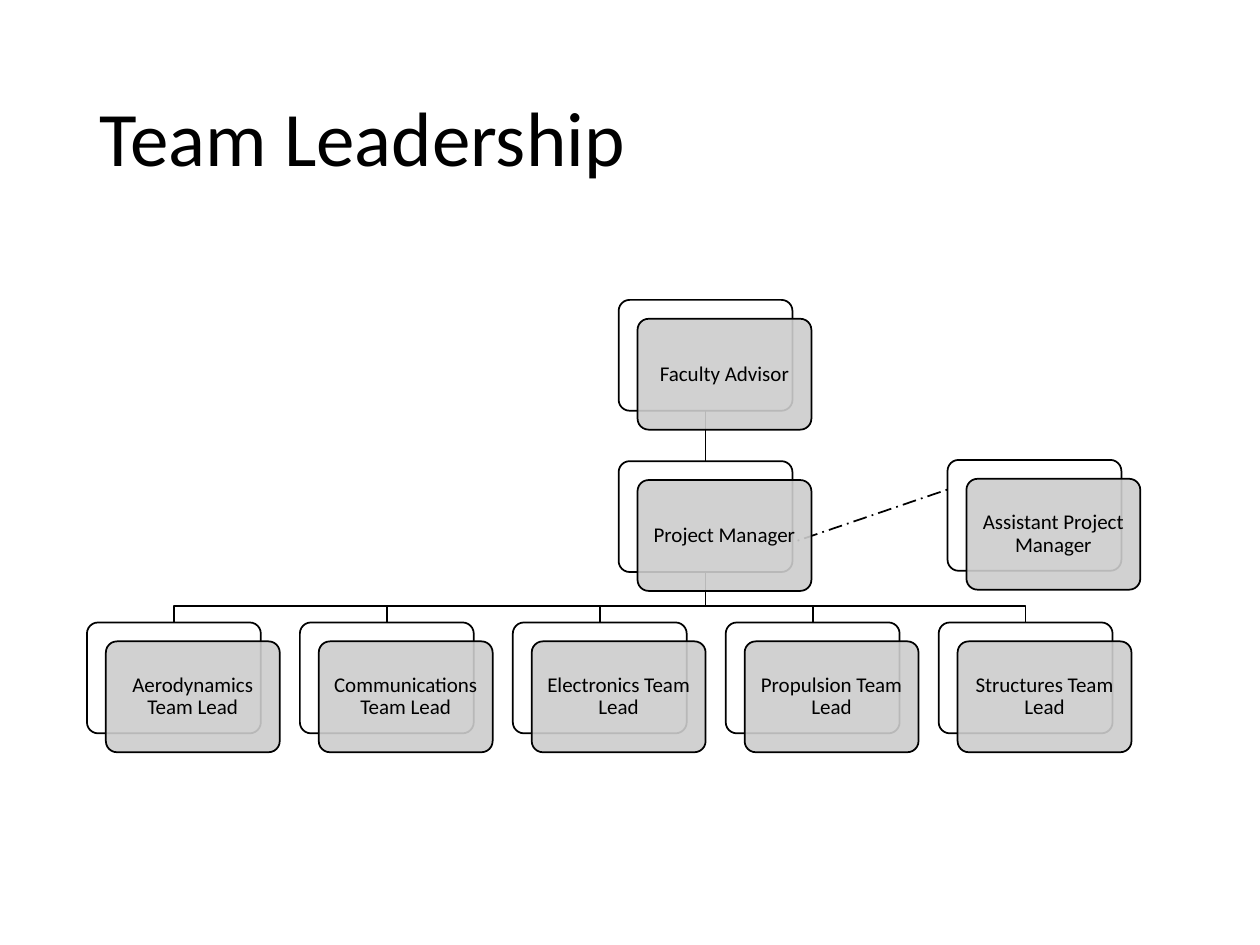
from lxml.etree import SubElement
from pptx import Presentation
from pptx.dml.color import RGBColor
from pptx.enum.dml import MSO_LINE
from pptx.enum.shapes import MSO_CONNECTOR, MSO_SHAPE
from pptx.enum.text import MSO_ANCHOR, PP_ALIGN
from pptx.oxml.ns import qn
from pptx.util import Inches, Pt

COLORS = {"ink": "000000", "back": "FFFFFF", "card": "CCCCCC"}
FONT = "Calibri"

CARD_W, CARD_H = 1.38, 0.88
CARD_SHIFT = 0.15
PITCH = 1.69
LEFT = 0.69
ADVISOR_Y, MANAGER_Y, LEADS_Y = 2.38, 3.66, 4.94
BUS_Y = 4.81
MANAGER_X = 4.91
ASSISTANT_X, ASSISTANT_Y = 7.52, 3.65

LEADS = [
    "Aerodynamics Team Lead",
    "Communications Team Lead",
    "Electronics Team Lead",
    "Propulsion Team Lead",
    "Structures Team Lead",
]


def rgb(name):
    return RGBColor.from_string(COLORS[name])


def style_line(line):
    line.color.rgb = rgb("ink")
    line.width = Pt(1)


def write(tf, text, size, align):
    tf.word_wrap = True
    tf.vertical_anchor = MSO_ANCHOR.MIDDLE
    p = tf.paragraphs[0]
    p.alignment = align
    p.line_spacing = 0.9
    r = p.add_run()
    r.text = text
    r.font.name = FONT
    r.font.size = Pt(size)
    r.font.color.rgb = rgb("ink")


def add_title(slide, text):
    title = slide.shapes.title
    title.left, title.top = Inches(LEFT), Inches(0.4)
    title.width, title.height = Inches(8.62), Inches(1.45)
    write(title.text_frame, text, 44, PP_ALIGN.LEFT)


def add_panel(slide, x, y, fill):
    sp = slide.shapes.add_shape(MSO_SHAPE.ROUNDED_RECTANGLE, Inches(x),
                                Inches(y), Inches(CARD_W), Inches(CARD_H))
    sp.adjustments[0] = 0.1
    sp.shadow.inherit = False
    sp.fill.solid()
    sp.fill.fore_color.rgb = rgb(fill)
    style_line(sp.line)
    return sp


def add_role(slide, x, y, text):
    """Draw a white panel with a translucent, labelled card in front of it."""
    add_panel(slide, x, y, "back")
    card = add_panel(slide, x + CARD_SHIFT, y + CARD_SHIFT, "card")
    color = card.fill._xPr.find(qn("a:solidFill"))[0]
    SubElement(color, qn("a:alpha"), val="90000")
    tf = card.text_frame
    tf.margin_left = tf.margin_right = Inches(0.05)
    tf.margin_top = tf.margin_bottom = Inches(0.05)
    write(tf, text, 12, PP_ALIGN.CENTER)


def add_link(slide, start, end, dash=None):
    link = slide.shapes.add_connector(
        MSO_CONNECTOR.STRAIGHT, *(Inches(v) for v in start + end))
    style_line(link.line)
    if dash:
        link.line.dash_style = dash
    SubElement(link._element.spPr, qn("a:effectLst"))


def add_branch(slide, start, end):
    """Draw a stepped line that turns at the height of the shared bus."""
    points = [start, (start[0], BUS_Y), (end[0], BUS_Y), end]
    points = [(Inches(x), Inches(y)) for x, y in points]
    builder = slide.shapes.build_freeform(*points[0])
    builder.add_line_segments(points[1:], close=False)
    sp = builder.convert_to_shape()
    sp.shadow.inherit = False
    sp.fill.background()
    style_line(sp.line)


def main():
    prs = Presentation()
    prs.slide_width, prs.slide_height = Inches(10), Inches(7.5)
    slide = prs.slides.add_slide(prs.slide_layouts[5])
    add_title(slide, "Team Leadership")

    half = CARD_W / 2
    trunk_x = MANAGER_X + half
    manager_foot = (trunk_x, MANAGER_Y + CARD_H)
    lead_xs = [LEFT + i * PITCH for i in range(len(LEADS))]

    add_link(slide, manager_foot, (ASSISTANT_X + half, ASSISTANT_Y),
             MSO_LINE.LONG_DASH_DOT)
    for x in lead_xs:
        add_branch(slide, manager_foot, (x + half, LEADS_Y))
    add_link(slide, (trunk_x, ADVISOR_Y + CARD_H), (trunk_x, MANAGER_Y))

    add_role(slide, MANAGER_X, ADVISOR_Y, "Faculty Advisor")
    add_role(slide, MANAGER_X, MANAGER_Y, "Project Manager")
    for x, lead in zip(lead_xs, LEADS):
        add_role(slide, x, LEADS_Y, lead)
    add_role(slide, ASSISTANT_X, ASSISTANT_Y, "Assistant Project Manager")

    prs.save("out.pptx")


if __name__ == "__main__":
    main()
